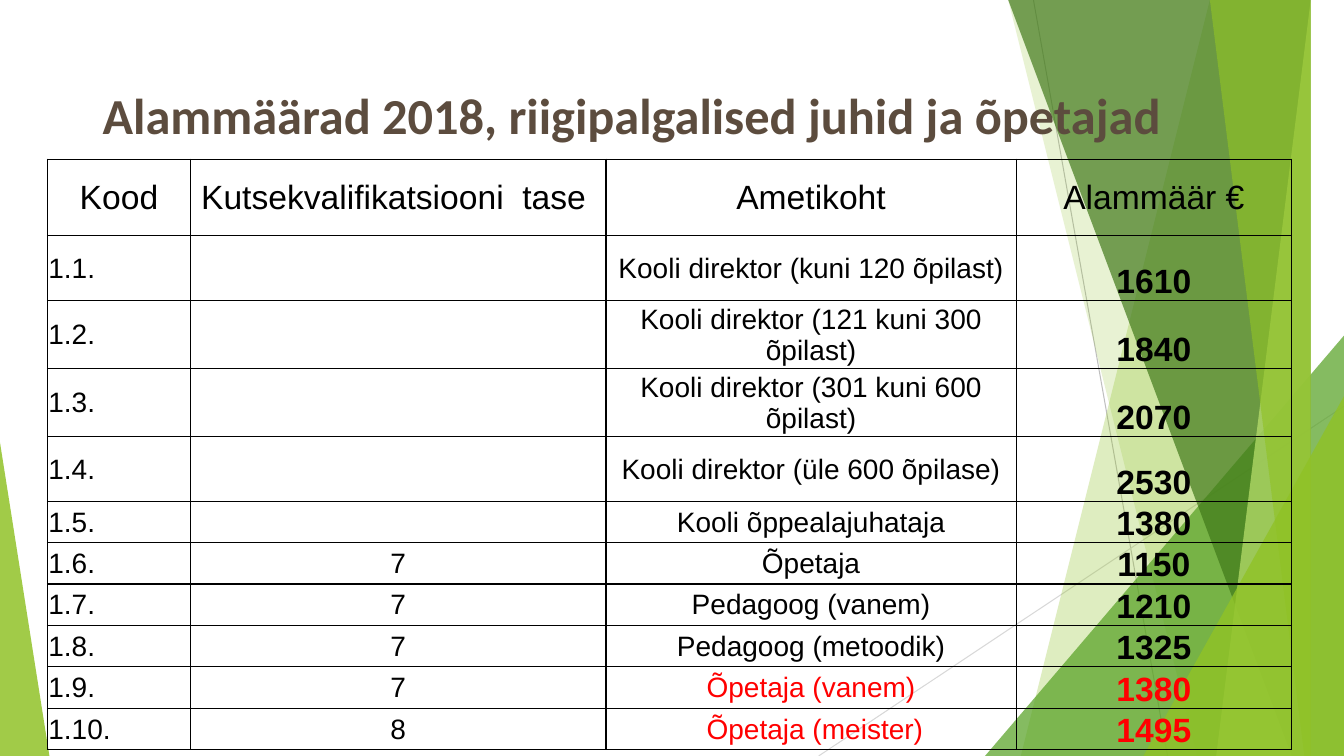
"""Build the slide with the 2018 minimum pay rates of school leaders and teachers."""
import pptx
import pptx.dml.color
import pptx.enum.shapes
import pptx.enum.text
import pptx.oxml
import pptx.oxml.ns
import pptx.util
from lxml import etree


class Theme:
    title_font, table_font = "Calibri", "Arial"
    title_size, large_size, body_size = 36, 24, 20
    title_color, text_color, accent_color = "5C4C3E", "000000", "FF0000"
    lime, green, dark_green, pale_lime = "90C226", "54A021", "3F7818", "BFE471"
    border_width, line_width = 1, 0.75


WIDTH, HEIGHT = 13.33, 7.5
TITLE = "Alammäärad 2018, riigipalgalised juhid ja õpetajad"
HEADER = ("Kood", "Kutsekvalifikatsiooni  tase ", "Ametikoht", "Alammäär €")
POSITIONS = [
    ("1.1.", "", "Kooli direktor (kuni 120 õpilast)", "1610"),
    ("1.2.", "", "Kooli direktor (121 kuni 300 õpilast)", "1840"),
    ("1.3.", "", "Kooli direktor (301 kuni 600 õpilast)", "2070"),
    ("1.4.", "", "Kooli direktor (üle 600 õpilase)", "2530"),
    ("1.5.", "", "Kooli õppealajuhataja", "1380"),
    ("1.6.", "7", "Õpetaja", "1150"),
    ("1.7.", "7", "Pedagoog (vanem)", "1210"),
    ("1.8.", "7", "Pedagoog (metoodik)", "1325"),
    ("1.9.", "7", "Õpetaja (vanem)", "1380"),
    ("1.10.", "8", " Õpetaja (meister)", "1495"),
]
HIGHLIGHTED_CODES = {"1.9.", "1.10."}
COLUMN_WIDTHS = [1.42, 4.12, 4.07, 2.73]
ROW_HEIGHTS = [0.76, 0.64, 0.67, 0.67, 0.64] + [0.35] * 6
TABLE_LEFT, TABLE_TOP = 0.47, 1.58

RAYS = [
    ((10.25, 0), (11.58, HEIGHT), "BFBFBF"),
    ((WIDTH, 4.03), (8.12, HEIGHT), "D8D8D8"),
]
FACETS = [
    ("band", 12.28, 10.04, Theme.lime, 29),
    ("band", 10.5, 11.83, Theme.lime, 20),
    ("triangle", (9.77, 3.33, 3.56), 1, Theme.green, 71),
    ("band", 10.21, 12.91, Theme.dark_green, 69),
    ("band", 13.03, 11.92, Theme.pale_lime, 69),
    ("band", 11.96, 13.18, Theme.lime, 64),
    ("triangle", (11.34, 3.93, 1.99), 1, Theme.lime, 80),
    ("triangle", (0, 4.39, 0.49), 0, Theme.lime, 84),
]

inches = pptx.util.Inches
points = pptx.util.Pt
color = pptx.dml.color.RGBColor.from_string
qualified = pptx.oxml.ns.qn


def add_ray(slide, start, end, line_color):
    ray = slide.shapes.add_connector(
        pptx.enum.shapes.MSO_CONNECTOR.STRAIGHT, *map(inches, start + end))
    ray.line.color.rgb = color(line_color)
    ray.line.width = points(Theme.line_width)
    etree.SubElement(ray._element.spPr, qualified("a:effectLst"))


def add_facet(slide, kind, place, slant, fill_color, opacity):
    if kind == "band":
        builder = slide.shapes.build_freeform(place, -0.01, scale=inches(1))
        builder.add_line_segments([(WIDTH, -0.01), (WIDTH, HEIGHT), (slant, HEIGHT)])
        facet = builder.convert_to_shape()
    else:
        left, top, width = place
        facet = slide.shapes.add_shape(
            pptx.enum.shapes.MSO_SHAPE.ISOSCELES_TRIANGLE,
            *map(inches, (left, top, width, HEIGHT - top)))
        facet.adjustments[0] = slant
    facet.shadow.inherit = False
    facet.line.fill.background()
    facet.fill.solid()
    facet.fill.fore_color.rgb = color(fill_color)
    tint = facet._element.spPr.find(".//" + qualified("a:srgbClr"))
    etree.SubElement(tint, qualified("a:alpha"), val=str(opacity * 1000))


def style_font(paragraph, name, size, text_color, bold):
    paragraph.font.name = name
    paragraph.font.size = points(size)
    paragraph.font.color.rgb = color(text_color)
    paragraph.font.bold = bold


def add_title(slide):
    title = slide.shapes.add_textbox(*map(inches, (0.92, 0.67, 11.88, 1)))
    title.text_frame.word_wrap = True
    title.text_frame.vertical_anchor = pptx.enum.text.MSO_ANCHOR.MIDDLE
    paragraph = title.text_frame.paragraphs[0]
    paragraph.text = TITLE
    paragraph.line_spacing = 0.9
    style_font(paragraph, Theme.title_font, Theme.title_size, Theme.title_color, True)


def add_borders(cell):
    properties = cell._tc.get_or_add_tcPr()
    for side in ("lnL", "lnR", "lnT", "lnB"):
        border = etree.SubElement(properties, qualified("a:" + side),
                                  w=str(points(Theme.border_width)))
        fill = etree.SubElement(border, qualified("a:solidFill"))
        etree.SubElement(fill, qualified("a:srgbClr"), val=Theme.text_color)


def fill_cell(cell, text, is_header, is_code, is_rate, highlighted):
    anchor = pptx.enum.text.MSO_ANCHOR
    align = pptx.enum.text.PP_ALIGN
    bottom = is_rate and not is_header
    cell.margin_left = cell.margin_right = cell.margin_top = inches(0.01)
    cell.margin_bottom = 0
    cell.vertical_anchor = anchor.BOTTOM if bottom else anchor.MIDDLE
    add_borders(cell)
    cell.fill.background()
    paragraph = cell.text_frame.paragraphs[0]
    paragraph.text = text
    paragraph.alignment = align.LEFT if is_code and not is_header else align.CENTER
    style_font(paragraph, Theme.table_font,
               Theme.large_size if is_header or is_rate else Theme.body_size,
               Theme.accent_color if highlighted else Theme.text_color, bottom)


def add_rates_table(slide):
    rows = [HEADER] + POSITIONS
    frame = slide.shapes.add_table(
        len(rows), len(HEADER),
        *map(inches, (TABLE_LEFT, TABLE_TOP, sum(COLUMN_WIDTHS), sum(ROW_HEIGHTS))))
    table = frame.table
    table.first_row = table.horz_banding = False
    for column, width in zip(table.columns, COLUMN_WIDTHS):
        column.width = inches(width)
    for row_index, values in enumerate(rows):
        table.rows[row_index].height = inches(ROW_HEIGHTS[row_index])
        for column_index, text in enumerate(values):
            fill_cell(table.cell(row_index, column_index), text,
                      is_header=row_index == 0,
                      is_code=column_index == 0,
                      is_rate=column_index == 3,
                      highlighted=values[0] in HIGHLIGHTED_CODES and column_index >= 2)


def main():
    presentation = pptx.Presentation()
    presentation.slide_width = inches(WIDTH)
    presentation.slide_height = inches(HEIGHT)
    slide = presentation.slides.add_slide(presentation.slide_layouts[6])
    for ray in RAYS:
        add_ray(slide, *ray)
    for facet in FACETS:
        add_facet(slide, *facet)
    add_title(slide)
    add_rates_table(slide)
    presentation.save("out.pptx")


if __name__ == "__main__":
    main()
